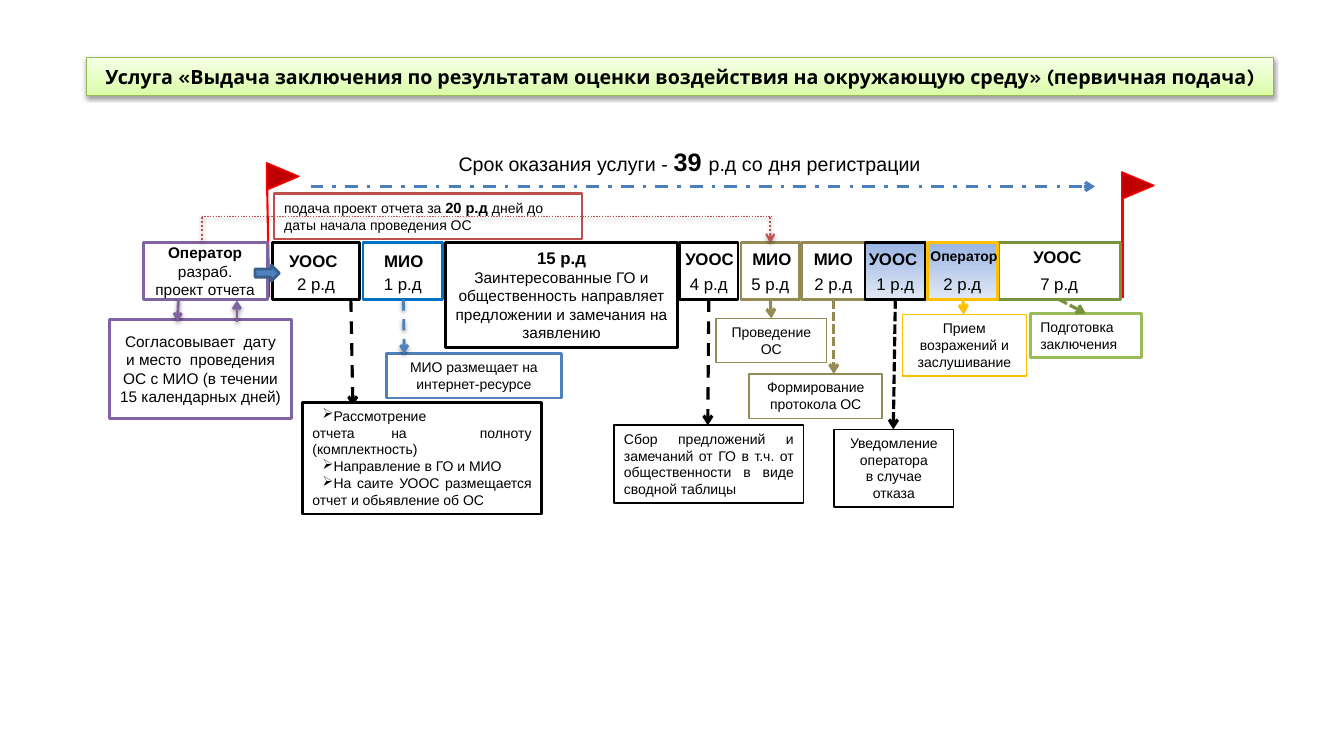
"""Build the slide with the timeline of the environmental impact assessment service."""
from lxml import etree
from pptx import Presentation
from pptx.dml.color import RGBColor
from pptx.enum.dml import MSO_LINE
from pptx.enum.shapes import MSO_CONNECTOR, MSO_SHAPE
from pptx.enum.text import MSO_ANCHOR, MSO_AUTO_SIZE, PP_ALIGN
from pptx.oxml.ns import qn
from pptx.util import Inches, Pt

LEFT, CENTER, JUSTIFY = PP_ALIGN.LEFT, PP_ALIGN.CENTER, PP_ALIGN.JUSTIFY
TOP, MIDDLE, BOTTOM = MSO_ANCHOR.TOP, MSO_ANCHOR.MIDDLE, MSO_ANCHOR.BOTTOM
DASH, DASH_DOT = MSO_LINE.DASH, MSO_LINE.DASH_DOT
SHORT_DASH, DOT = MSO_LINE.SQUARE_DOT, MSO_LINE.ROUND_DOT
RECTANGLE, TRIANGLE = MSO_SHAPE.RECTANGLE, MSO_SHAPE.FLOWCHART_MERGE
BLACK, WHITE, RED, DARK_RED = "000000", "FFFFFF", "FF0000", "C00000"
PURPLE, OLIVE, GOLD, BRICK = "8064A2", "948A54", "FFC000", "C0504D"
BLUE, GREEN = "4F81BD", "77933C"
BLUE_FADE = ("9AB5E4", "E1E8F5", 270)
STAGE_TOP, STAGE_HEIGHT = 2.41, 0.56
STAGE_BOTTOM = STAGE_TOP + STAGE_HEIGHT
BULLET = "➢"

presentation = Presentation()
presentation.slide_width, presentation.slide_height = Inches(13.33), Inches(7.5)
slide = presentation.slides.add_slide(presentation.slide_layouts[5])
connectors = []


def draw_line(start, end, color, width, dash=None, arrow=True, shadow=False):
    """Draw a straight line and remember whether it casts a shadow."""
    connector = slide.shapes.add_connector(
        MSO_CONNECTOR.STRAIGHT, *[Inches(value) for value in (*start, *end)])
    connector.line.color.rgb = RGBColor.from_string(color)
    connector.line.width = Pt(width)
    if dash:
        connector.line.dash_style = dash
    if arrow:
        etree.SubElement(connector.line._get_or_add_ln(), qn("a:tailEnd"), type="arrow")
    connectors.append((connector, shadow))


def draw_box(place, text="", size=10, color=None, width=2, fill=WHITE, align=CENTER,
             anchor=TOP, kind=RECTANGLE, bold_size=None, font="Arial", shape=None):
    """Draw or format a box; text between asterisks is bold."""
    left, top, box_width, height = [Inches(value) for value in place]
    if shape is None:
        shape = slide.shapes.add_shape(kind, left, top, box_width, height)
        shape.shadow.inherit = False
    shape.left, shape.top, shape.width, shape.height = left, top, box_width, height
    if isinstance(fill, tuple):
        shape.fill.gradient()
        shape.fill.gradient_angle = fill[2]
        for stop, stop_color in zip(shape.fill.gradient_stops, fill):
            stop.color.rgb = RGBColor.from_string(stop_color)
    elif fill:
        shape.fill.solid()
        shape.fill.fore_color.rgb = RGBColor.from_string(fill)
    else:
        shape.fill.background()
    if color:
        shape.line.color.rgb = RGBColor.from_string(color)
        shape.line.width = Pt(width)
    else:
        shape.line.fill.background()
    frame = shape.text_frame
    frame.word_wrap, frame.auto_size = True, MSO_AUTO_SIZE.NONE
    frame.vertical_anchor = anchor
    for index, line in enumerate(text.split("\n")):
        paragraph = frame.add_paragraph() if index else frame.paragraphs[0]
        paragraph.alignment = align
        if line.startswith(BULLET):
            properties = paragraph._p.get_or_add_pPr()
            properties.set("marL", "0")
            properties.set("indent", str(Inches(0.1)))
            etree.SubElement(properties, qn("a:buChar"), char=BULLET)
        for part, words in enumerate(line.removeprefix(BULLET).split("*")):
            if words:
                run = paragraph.add_run()
                run.text = words
                run.font.name = font
                run.font.bold = part % 2 == 1
                run.font.size = Pt(bold_size if part % 2 and bold_size else size)
                run.font.color.rgb = RGBColor.from_string(BLACK)
    return shape


title = slide.shapes.title
draw_box((0.86, 0.57, 11.77, 0.38),
         "*Услуга «Выдача заключения по результатам оценки воздействия на окружающую среду» "
         "(первичная подача)*",
         14, "98B955", 0.75, ("DAFDA7", "F5FFE7", 90), anchor=MIDDLE, font="Karla", shape=title)
draw_box((4, 1.4, 5.68, 0.4), "Срок оказания услуги - *39 *р.д со дня регистрации",
         14, fill=None, bold_size=18)
draw_box((2.72, 1.92, 3.05, 0.45),
         "подача проект отчета за *20 р.д *дней до даты начала проведения ОС",
         10, BRICK, 1.5, align=LEFT, bold_size=10.5)

draw_line((2.65, 1.88), (2.67, 2.95), RED, 1.5, arrow=False)
draw_line((11.13, 1.84), (11.13, 2.96), RED, 2.25, arrow=False)
draw_line((3.48, STAGE_BOTTOM), (3.5, 4.03), BLACK, 2.25, DASH)
for flag_left, flag_top in ((2.67, 1.59), (11.15, 1.68)):
    flag = draw_box((flag_left, flag_top, 0.27, 0.32), color=RED, width=1, fill=DARK_RED,
                    kind=TRIANGLE)
    flag.rotation = 270

stages = [
    ("УООС", "2 р.д", 2.7, 0.87, BLACK, WHITE, 2.77, 2.44),
    ("МИО", "1 р.д", 3.6, 0.79, "0070C0", WHITE, 3.65, 2.44),
    ("УООС", "4 р.д", 6.74, 0.58, BLACK, WHITE, 6.7, 2.42),
    ("УООС", "7 р.д", 9.9, 1.21, GREEN, WHITE, 10.15, 2.4),
    ("МИО", "5 р.д", 7.35, 0.58, OLIVE, WHITE, 7.3, 2.42),
    ("МИО", "2 р.д", 7.95, 0.63, OLIVE, WHITE, 7.91, 2.42),
    ("УООС", "1 р.д", 8.58, 0.6, BLACK, BLUE_FADE, 8.52, 2.42),
    ("Оператор", "2 р.д", 9.2, 0.69, GOLD, BLUE_FADE, 9.13, 2.41),
]
for owner, days, left, width, color, fill, label_left, label_top in stages:
    draw_box((left, STAGE_TOP, width, STAGE_HEIGHT), days, 12, color, fill=fill, anchor=BOTTOM)
for owner, days, left, width, color, fill, label_left, label_top in stages:
    is_operator = owner == "Оператор"
    draw_box((label_left, label_top, 0.92 if is_operator else 0.71, 0.3), f"*{owner}*",
             10 if is_operator else 12, fill=None, align=CENTER if owner == "МИО" else LEFT)

draw_box((4.42, STAGE_TOP, 2.3, 1.04),
         "*15 р.д*\nЗаинтересованные ГО и общественность направляет\n"
         "предложении и замечания на заявлению",
         11, BLACK, 2.25, None, bold_size=12)
draw_box((1.42, STAGE_TOP, 1.23, STAGE_HEIGHT), "*Оператор *разраб. проект отчета",
         11, PURPLE, anchor=MIDDLE)
draw_box((2.53, 2.63, 0.24, 0.16), color="3A5F8C", fill=BLUE, kind=MSO_SHAPE.RIGHT_ARROW)
draw_box((1.09, 3.17, 1.8, 0.98),
         "Согласовывает  дату и место  проведения ОС с МИО (в течении 15 календарных дней)",
         11, PURPLE, anchor=MIDDLE)

tasks = [
    ((10.22, 3.11, 1.1, 0.44), "Подготовка\nзаключения", "9BBB59", 2, JUSTIFY),
    ((3.83, 3.51, 1.74, 0.44), "МИО размещает на интернет-ресурсе", BLUE, 2, CENTER),
    ((3, 3.99, 2.37, 1.11),
     "➢Рассмотрение\nотчета на  полноту (комплектность)\n➢Направление в ГО и МИО\n"
     "➢На саите УООС размещается отчет и обьявление об ОС", BLACK, 2, JUSTIFY),
    ((6.09, 4.22, 1.88, 0.77),
     "Сбор предложений и замечаний от ГО в т.ч. от общественности в виде сводной таблицы",
     BLACK, 1.25, JUSTIFY),
    ((7.1, 3.16, 1.1, 0.44), "Проведение ОС", OLIVE, 1, CENTER),
    ((7.43, 3.71, 1.32, 0.44), "Формирование протокола ОС", OLIVE, 1, CENTER),
    ((8.27, 4.26, 1.19, 0.77), "Уведомление оператора\nв случае отказа", BLACK, 1, CENTER),
    ((8.95, 3.12, 1.23, 0.61), "Прием возражений и заслушивание", GOLD, 1, CENTER),
]
for place, text, color, width, align in tasks:
    draw_box(place, text, 10, color, width, align=align)

draw_line((3.08, 1.85), (10.86, 1.85), "4B7EBC", 2.25, DASH_DOT)
draw_line((4, STAGE_BOTTOM), (4.01, 3.51), BLUE, 2, DASH, shadow=True)
draw_line((7.03, STAGE_BOTTOM), (7.02, 4.22), BLACK, 2.25, DASH)
for start_left, end, color in (
    (10.5, (10.77, 3.11), GREEN),
    (7.64, (7.65, 3.16), OLIVE),
    (8.27, (8.27, 3.71), OLIVE),
    (8.88, (8.86, 4.26), BLACK),
    (9.55, (9.56, 3.12), GOLD),
):
    draw_line((start_left, STAGE_BOTTOM), end, color, 2.25, SHORT_DASH)
draw_line((1.77, 2.96), (1.76, 3.19), PURPLE, 2, shadow=True)
draw_line((2.35, 3.19), (2.35, 2.98), PURPLE, 2, shadow=True)
draw_line((2, 2.15), (7.65, 2.15), BRICK, 1, DOT, arrow=False, shadow=True)
draw_line((7.64, 2.15), (7.64, STAGE_TOP), BRICK, 1.5, DOT, shadow=True)
draw_line((2, 2.15), (2, STAGE_TOP), BRICK, 1.5, DOT, arrow=False, shadow=True)

for shape, has_shadow in [(title, True), *connectors]:
    effects = etree.SubElement(shape._element.spPr, qn("a:effectLst"))
    if has_shadow:
        shadow = etree.SubElement(effects, qn("a:outerShdw"), blurRad=str(Pt(3.1)),
                                  dist=str(Pt(1.6)), dir="5400000", rotWithShape="0")
        shadow_color = etree.SubElement(shadow, qn("a:srgbClr"), val=BLACK)
        etree.SubElement(shadow_color, qn("a:alpha"), val="38000")

presentation.save("out.pptx")
